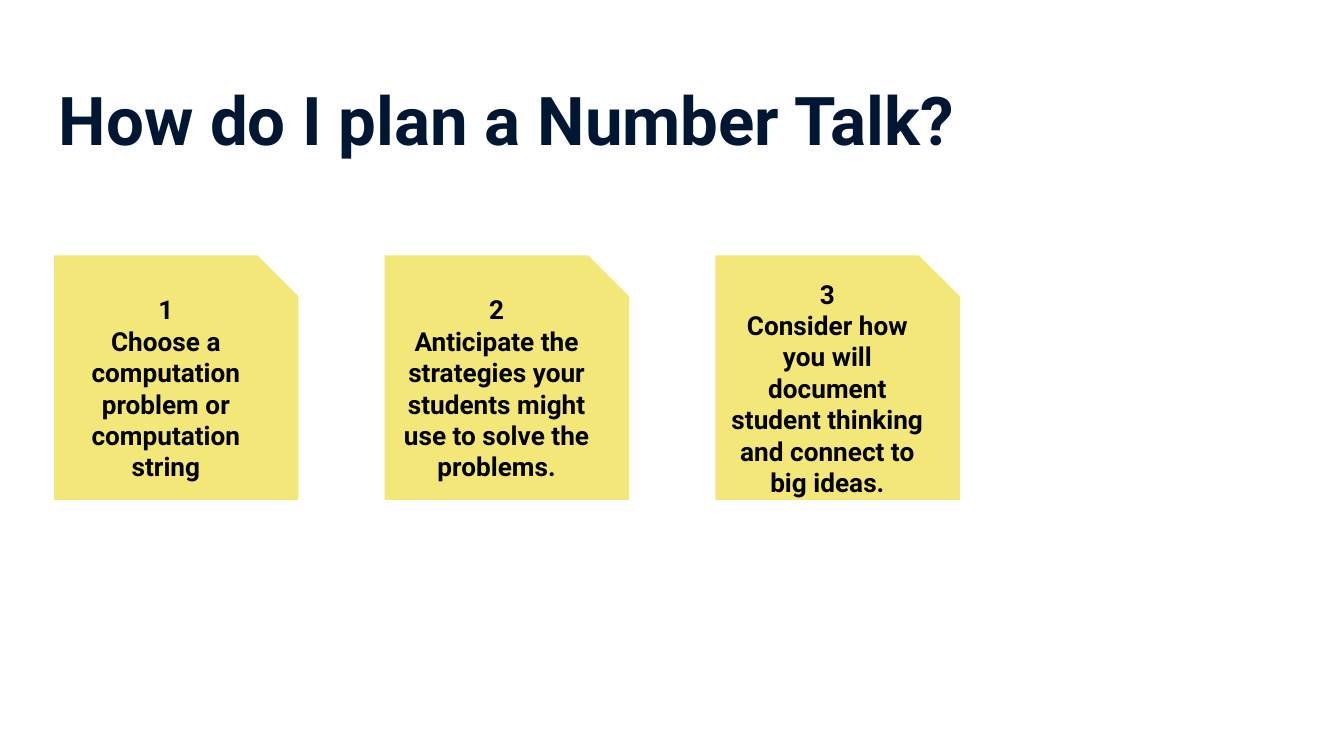
from typing import NamedTuple

from pptx import Presentation
from pptx.dml.color import RGBColor
from pptx.enum.shapes import MSO_SHAPE
from pptx.enum.text import MSO_ANCHOR, PP_ALIGN
from pptx.slide import Slide
from pptx.text.text import TextFrame
from pptx.util import Cm, Pt

SNIPPED = MSO_SHAPE.SNIP_1_RECTANGLE
TOP, MIDDLE = MSO_ANCHOR.TOP, MSO_ANCHOR.MIDDLE
LEFT, CENTER = PP_ALIGN.LEFT, PP_ALIGN.CENTER

NAVY = RGBColor(0x00, 0x17, 0x33)
BLACK = RGBColor(0x00, 0x00, 0x00)
YELLOW = RGBColor(0xF3, 0xE7, 0x79)

FONT = "Roboto"
INSET = Cm(0.25)
NOTE_LEFT, NOTE_TOP = Cm(1.02), Cm(4.83)
NOTE_SIZE, NOTE_PITCH = Cm(4.62), Cm(6.25)
SNIP_RATIO = 0.167


class TextStyle(NamedTuple):
    size: int
    color: RGBColor
    align: PP_ALIGN
    anchor: MSO_ANCHOR


class Step(NamedTuple):
    number: int
    text: str


TITLE_STYLE = TextStyle(36, NAVY, LEFT, TOP)
NOTE_STYLE = TextStyle(14, BLACK, CENTER, MIDDLE)

STEPS = [
    Step(1, "Choose a computation problem or computation string"),
    Step(2, "Anticipate the strategies your students might use to solve the problems."),
    Step(3, "Consider how you will document student thinking and connect to big ideas."),
]


def write_text(frame: TextFrame, lines: list[str], style: TextStyle) -> None:
    frame.word_wrap = True
    frame.vertical_anchor = style.anchor
    frame.margin_left = frame.margin_right = INSET
    frame.margin_top = frame.margin_bottom = INSET
    for index, line in enumerate(lines):
        para = frame.add_paragraph() if index else frame.paragraphs[0]
        para.alignment = style.align
        span = para.add_run()
        span.text = line
        span.font.name = FONT
        span.font.size = Pt(style.size)
        span.font.bold = True
        span.font.color.rgb = style.color


def add_title(page: Slide, text: str) -> None:
    box = page.shapes.add_textbox(Cm(0.86), Cm(1.24), Cm(23.67), Cm(1.6))
    write_text(box.text_frame, [text], TITLE_STYLE)


def add_note(page: Slide, column: int, step: Step) -> None:
    left = NOTE_LEFT + column * NOTE_PITCH
    note = page.shapes.add_shape(SNIPPED, left, NOTE_TOP, NOTE_SIZE, NOTE_SIZE)
    note.adjustments[0] = SNIP_RATIO
    note.shadow.inherit = False
    note.fill.solid()
    note.fill.fore_color.rgb = YELLOW
    note.line.fill.background()
    write_text(note.text_frame, [str(step.number), step.text], NOTE_STYLE)


def main() -> None:
    deck = Presentation()
    deck.slide_width, deck.slide_height = Cm(25.4), Cm(14.29)
    page = deck.slides.add_slide(deck.slide_layouts[6])
    add_title(page, "How do I plan a Number Talk?")
    for column, step in enumerate(STEPS):
        add_note(page, column, step)
    deck.save("out.pptx")


if __name__ == "__main__":
    main()
